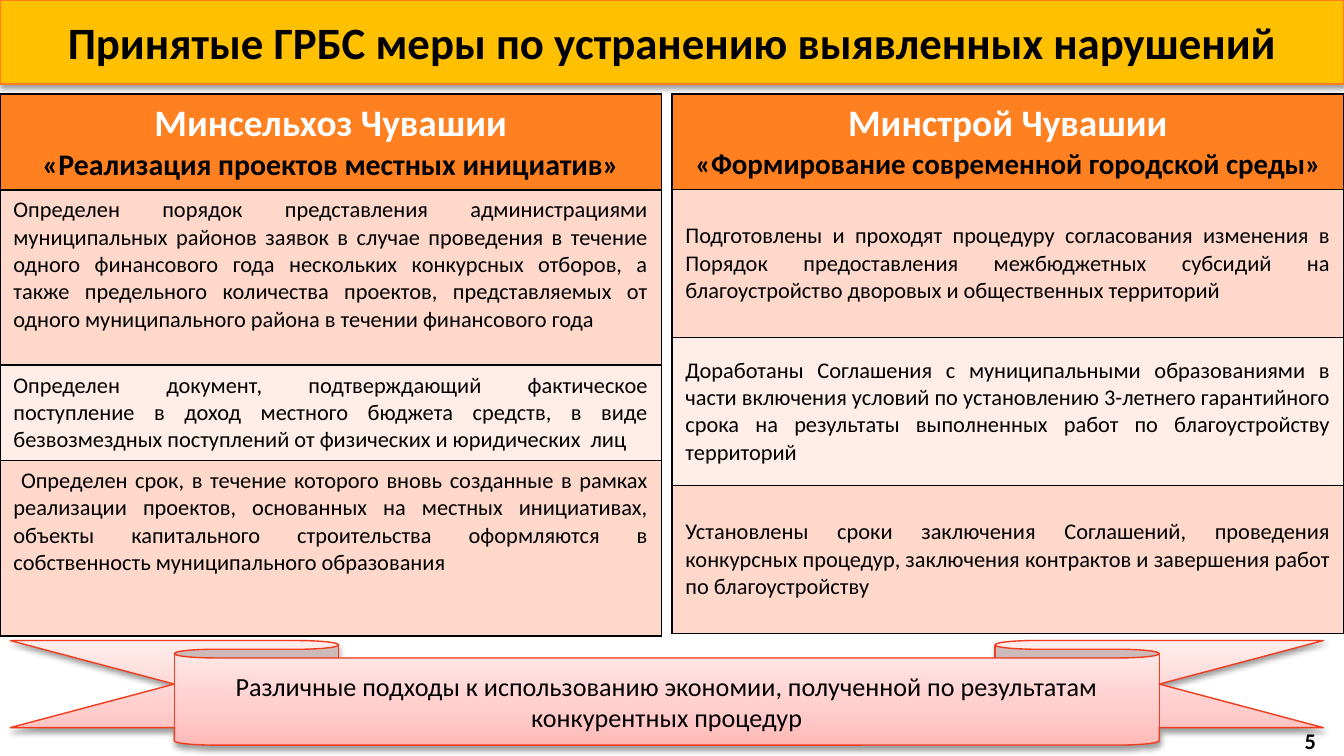
from lxml.etree import SubElement
from pptx import Presentation
from pptx.dml.color import RGBColor
from pptx.enum.shapes import MSO_SHAPE
from pptx.enum.text import MSO_ANCHOR, PP_ALIGN
from pptx.oxml.ns import qn
from pptx.util import Pt

BLACK = RGBColor(0x00, 0x00, 0x00)
WHITE = RGBColor(0xFF, 0xFF, 0xFF)
GOLD = RGBColor(0xFF, 0xC0, 0x00)
ORANGE = RGBColor(0xFF, 0x80, 0x21)
ORANGE_LINE = RGBColor(0xFF, 0x7C, 0x1B)
RED_LINE = RGBColor(0xF1, 0x3C, 0x1E)
BAND_DARK = RGBColor(0xFF, 0xD8, 0xCC)
BAND_LIGHT = RGBColor(0xFF, 0xED, 0xE8)
RIBBON_STOPS = [
    (0, RGBColor(0xFF, 0xBA, 0xB7)),
    (35, RGBColor(0xFF, 0xCE, 0xCC)),
    (100, RGBColor(0xFF, 0xED, 0xEC)),
]


class SlideBuilder:
    font = "Calibri"

    def __init__(self, slide):
        self.slide = slide

    def add_text(self, para, text, size, color=BLACK, bold=False, align=PP_ALIGN.CENTER):
        para.alignment = align
        run = para.add_run()
        run.text = text
        run.font.name = self.font
        run.font.size = Pt(size)
        run.font.bold = bold
        run.font.color.rgb = color

    def shape(self, kind, left, top, width, height, line, text, size, bold=False):
        shape = self.slide.shapes.add_shape(kind, Pt(left), Pt(top), Pt(width), Pt(height))
        shape.line.color.rgb = line
        shape.line.width = Pt(0.75)
        frame = shape.text_frame
        frame.word_wrap = True
        frame.vertical_anchor = MSO_ANCHOR.MIDDLE
        self.add_text(frame.paragraphs[0], text, size, bold=bold)
        return shape

    def gradient(self, shape, stops, angle):
        shape.fill.gradient()
        shape.fill.gradient_angle = angle
        stop_list = shape._element.spPr.find(qn("a:gradFill")).find(qn("a:gsLst"))
        for old_stop in list(stop_list):
            stop_list.remove(old_stop)
        for percent, color in stops:
            stop = SubElement(stop_list, qn("a:gs"), pos=str(percent * 1000))
            SubElement(stop, qn("a:srgbClr"), val=str(color))

    def shadow(self, shape):
        shape.shadow.inherit = False
        effects = shape._element.spPr.find(qn("a:effectLst"))
        outer = SubElement(effects, qn("a:outerShdw"), blurRad=str(Pt(3.1)),
                           dist=str(Pt(1.6)), dir=str(90 * 60000), rotWithShape="0")
        color = SubElement(outer, qn("a:srgbClr"), val=str(BLACK))
        SubElement(color, qn("a:alpha"), val="38000")

    def style_cell(self, cell, fill, anchor):
        cell.vertical_anchor = anchor
        properties = cell._tc.get_or_add_tcPr()
        for side in ("a:lnL", "a:lnR", "a:lnT", "a:lnB"):
            border = SubElement(properties, qn(side), w=str(Pt(1)))
            SubElement(SubElement(border, qn("a:solidFill")), qn("a:srgbClr"), val=str(BLACK))
        cell.fill.solid()
        cell.fill.fore_color.rgb = fill

    def measures(self, left, top, width, heights, ministry, program, program_size,
                 items, anchor):
        frame = self.slide.shapes.add_table(
            len(heights), 1, Pt(left), Pt(top), Pt(width), Pt(sum(heights)))
        table = frame.table
        table.columns[0].width = Pt(width)
        for row, height in zip(table.rows, heights):
            row.height = Pt(height)

        header = table.cell(0, 0)
        self.style_cell(header, ORANGE, MSO_ANCHOR.MIDDLE)
        self.add_text(header.text_frame.paragraphs[0], ministry, 20, WHITE, True)
        self.add_text(header.text_frame.add_paragraph(), program, program_size, bold=True)

        for index, item in enumerate(items, start=1):
            cell = table.cell(index, 0)
            self.style_cell(cell, BAND_DARK if index % 2 else BAND_LIGHT, anchor)
            self.add_text(cell.text_frame.paragraphs[0], item, 12, align=PP_ALIGN.JUSTIFY)

    def label(self, left, top, width, height, text, size):
        box = self.slide.shapes.add_textbox(Pt(left), Pt(top), Pt(width), Pt(height))
        frame = box.text_frame
        frame.word_wrap = True
        frame.vertical_anchor = MSO_ANCHOR.MIDDLE
        self.add_text(frame.paragraphs[0], text, size, bold=True, align=PP_ALIGN.RIGHT)


def main():
    deck = Presentation()
    deck.slide_width, deck.slide_height = Pt(720), Pt(405)
    page = SlideBuilder(deck.slides.add_slide(deck.slide_layouts[6]))

    # Title bar
    title = page.shape(MSO_SHAPE.RECTANGLE, 0, 0, 720, 45, ORANGE_LINE,
                       "Принятые ГРБС меры по устранению выявленных нарушений", 24, True)
    title.fill.solid()
    title.fill.fore_color.rgb = GOLD
    page.shadow(title)

    # Measures of the two ministries
    page.measures(
        360, 50.5, 360, [51] + [79.3] * 3,
        "Минстрой Чувашии", "«Формирование современной городской среды»", 15.5,
        ["Подготовлены и проходят процедуру согласования изменения в Порядок предоставления "
         "межбюджетных субсидий на благоустройство дворовых и общественных территорий",
         "Доработаны Соглашения с муниципальными образованиями в части включения условий по "
         "установлению 3-летнего гарантийного срока на результаты выполненных работ по "
         "благоустройству территорий",
         "Установлены сроки заключения Соглашений, проведения конкурсных процедур, заключения "
         "контрактов и завершения работ по благоустройству"],
        MSO_ANCHOR.MIDDLE)
    page.measures(
        0, 50.5, 354.5, [51.2, 93.8, 51.2, 93.8],
        "Минсельхоз Чувашии", "«Реализация проектов местных инициатив»", 16,
        ["Определен порядок представления администрациями муниципальных районов заявок в случае "
         "проведения в течение одного финансового года нескольких конкурсных отборов, а также "
         "предельного количества проектов, представляемых от одного муниципального района в "
         "течении финансового года",
         "Определен документ, подтверждающий фактическое поступление в доход местного бюджета "
         "средств, в виде безвозмездных поступлений от физических и юридических  лиц",
         " Определен срок, в течение которого вновь созданные в рамках реализации проектов, "
         "основанных на местных инициативах, объекты капитального строительства оформляются в "
         "собственность муниципального образования"],
        MSO_ANCHOR.TOP)

    # Conclusion ribbon
    ribbon = page.shape(MSO_SHAPE.DOWN_RIBBON, 5.5, 343.2, 703.5, 56, RED_LINE,
                        "Различные подходы к использованию экономии, полученной по "
                        "результатам конкурентных процедур", 14)
    ribbon.adjustments[0] = 0.167
    ribbon.adjustments[1] = 0.75
    page.gradient(ribbon, RIBBON_STOPS, 90)
    page.shadow(ribbon)

    # Page number
    page.label(686, 386, 26, 21.6, "5", 12)

    deck.save("out.pptx")


if __name__ == "__main__":
    main()
